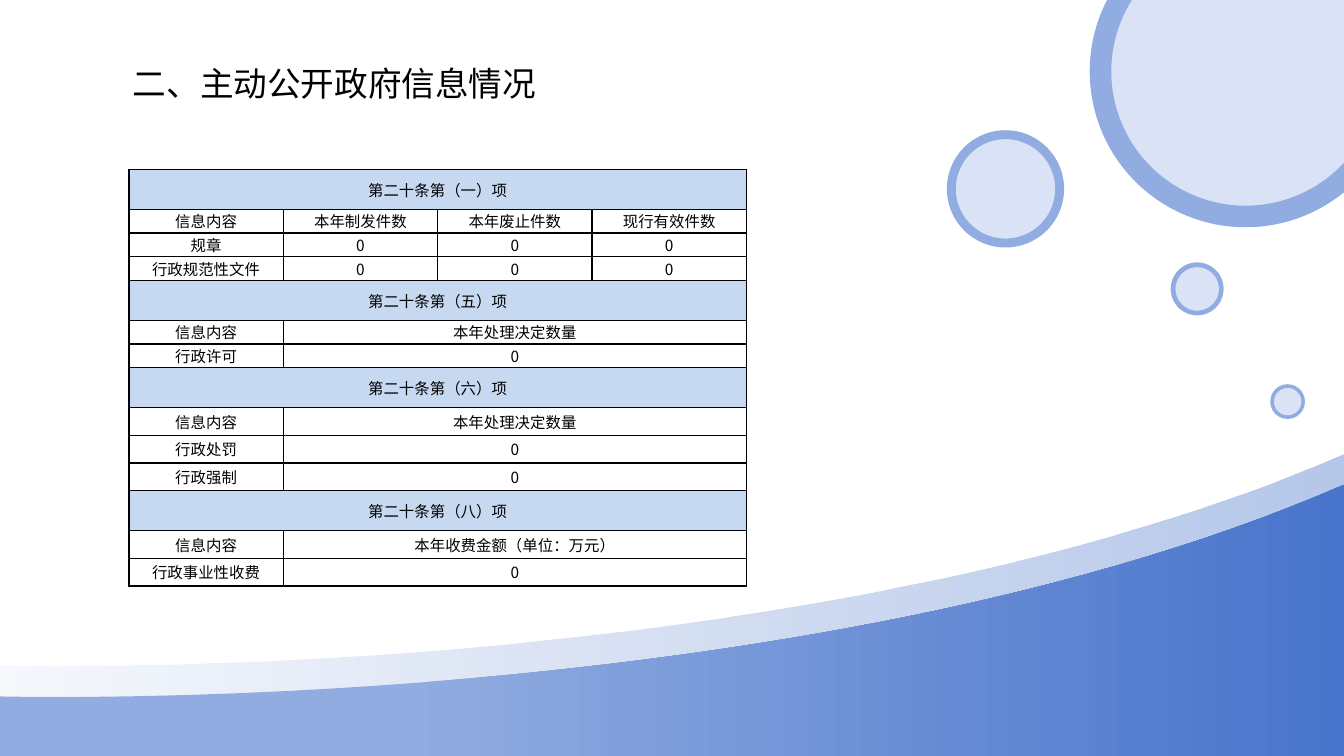
from pptx import Presentation
from pptx.dml.color import RGBColor
from pptx.enum.shapes import MSO_SHAPE
from pptx.enum.text import MSO_ANCHOR, PP_ALIGN
from pptx.oxml import parse_xml
from pptx.oxml.ns import nsdecls, qn
from pptx.util import Cm, Pt


def paint(color, code):
    color.rgb = RGBColor.from_string(code)


def style(run, size, face):
    """Set size, black colour and both the Latin and East Asian fonts."""
    run.font.size = Pt(size)
    run.font.name = face
    run.font.fill.solid()
    paint(run.font.fill.fore_color, "000000")
    run.font._element.append(
        parse_xml(f'<a:ea {nsdecls("a")} typeface="Noto Sans CJK SC"/>'))


deck = Presentation()
deck.slide_width, deck.slide_height = Cm(33.87), Cm(19.05)
slide = deck.slides.add_slide(deck.slide_layouts[6])
shapes = slide.shapes

# Title
title = shapes.add_textbox(Cm(2.67), Cm(1.45), Cm(15.75), Cm(1.27))
frame = title.text_frame
frame.word_wrap = True
frame.margin_left = Cm(0.68)
frame.text = "二、主动公开政府信息情况"
style(frame.paragraphs[0].runs[0], 24, "Arial")

# Table: each row has its height in cm and its texts; the last text spans the rest
rows = [
    (1, ["第二十条第（一）项"]),
    (0.6, ["信息内容", "本年制发件数", "本年废止件数", "现行有效件数"]),
    (0.6, ["规章", "0", "0", "0"]),
    (0.6, ["行政规范性文件", "0", "0", "0"]),
    (1, ["第二十条第（五）项"]),
    (0.6, ["信息内容", "本年处理决定数量"]),
    (0.6, ["行政许可", "0"]),
    (1, ["第二十条第（六）项"]),
    (0.7, ["信息内容", "本年处理决定数量"]),
    (0.7, ["行政处罚", "0"]),
    (0.7, ["行政强制", "0"]),
    (1, ["第二十条第（八）项"]),
    (0.7, ["信息内容", "本年收费金额（单位：万元）"]),
    (0.7, ["行政事业性收费", "0"]),
]
cols = 4
high = sum(row[0] for row in rows)
table = shapes.add_table(len(rows), cols, Cm(3.25), Cm(4.27),
                         Cm(15.56), Cm(high)).table
table.first_row = table.horz_banding = False

for r, (tall, texts) in enumerate(rows):
    table.rows[r].height = Cm(tall)
    for c in range(cols):
        cell = table.cell(r, c)
        cell.margin_left = cell.margin_right = Cm(0.18)
        cell.margin_top = cell.margin_bottom = 0
        cell.vertical_anchor = MSO_ANCHOR.MIDDLE
        props = cell._tc.get_or_add_tcPr()
        for side in "LRTB":
            props.append(parse_xml(
                f'<a:ln{side} {nsdecls("a")} w="{Pt(1)}"><a:solidFill>'
                f'<a:srgbClr val="000008"/></a:solidFill></a:ln{side}>'))
        if len(texts) == 1:
            cell.fill.solid()
            paint(cell.fill.fore_color, "C6D9F1")
        else:
            cell.fill.background()
        if c < len(texts):
            cell.text_frame.text = texts[c]
            para = cell.text_frame.paragraphs[0]
            para.alignment = PP_ALIGN.CENTER
            style(para.runs[0], 11, "Noto Sans CJK SC")
    if len(texts) < cols:
        table.cell(r, len(texts) - 1).merge(table.cell(r, cols - 1))

# Waves: one Bezier outline, drawn twice; stops are position, colour, opacity
curve = [(33.87, 11.43), (20.35, 17.32), (0, 16.76), (0, 16.76)]
steps = 60
waves = [
    (0, [(0, "A3B9E5", 10), (1, "A3B9E5", 80)]),
    (0.79, [(0.3, "91ACE0", 100), (1, "4874CB", 100)]),
]
for drop, stops in waves:
    points = []
    for i in range(steps + 1):
        t = i / steps
        parts = ((1 - t) ** 3, 3 * t * (1 - t) ** 2, 3 * t * t * (1 - t), t ** 3)
        x = sum(p * k[0] for p, k in zip(parts, curve))
        y = sum(p * k[1] for p, k in zip(parts, curve))
        points.append((Cm(x), Cm(y + drop)))
    base = Cm(18.26 + drop)
    points += [(0, base), (Cm(33.87), base)]
    pen = shapes.build_freeform(*points[0])
    pen.add_line_segments(points[1:], close=True)
    wave = pen.convert_to_shape()
    wave.shadow.inherit = False
    wave.line.fill.background()
    wave.fill.gradient()
    wave.fill.gradient_angle = 0
    for stop, (place, code, alpha) in zip(wave.fill.gradient_stops, stops):
        stop.position = place
        paint(stop.color, code)
    tints = wave.element.spPr.iter(qn("a:srgbClr"))
    for tint, (place, code, alpha) in zip(tints, stops):
        if alpha < 100:
            tint.append(parse_xml(
                f'<a:alpha {nsdecls("a")} val="{alpha * 1000}"/>'))

# Bubbles: centre x, centre y, diameter
bubbles = [(31.39, 1.8, 7.82), (25.34, 4.76, 2.92),
           (30.17, 7.28, 1.3), (32.45, 10.12, 0.84)]
for x, y, size in bubbles:
    for ratio, code in [(1, "91ACE0"), (0.87, "DAE3F5")]:
        wide = size * ratio
        disc = shapes.add_shape(MSO_SHAPE.OVAL, Cm(x - wide / 2),
                                Cm(y - wide / 2), Cm(wide), Cm(wide))
        disc.shadow.inherit = False
        disc.fill.solid()
        paint(disc.fill.fore_color, code)
        paint(disc.line.color, "91ACE0")
        disc.line.width = Pt(1)

deck.save("out.pptx")
